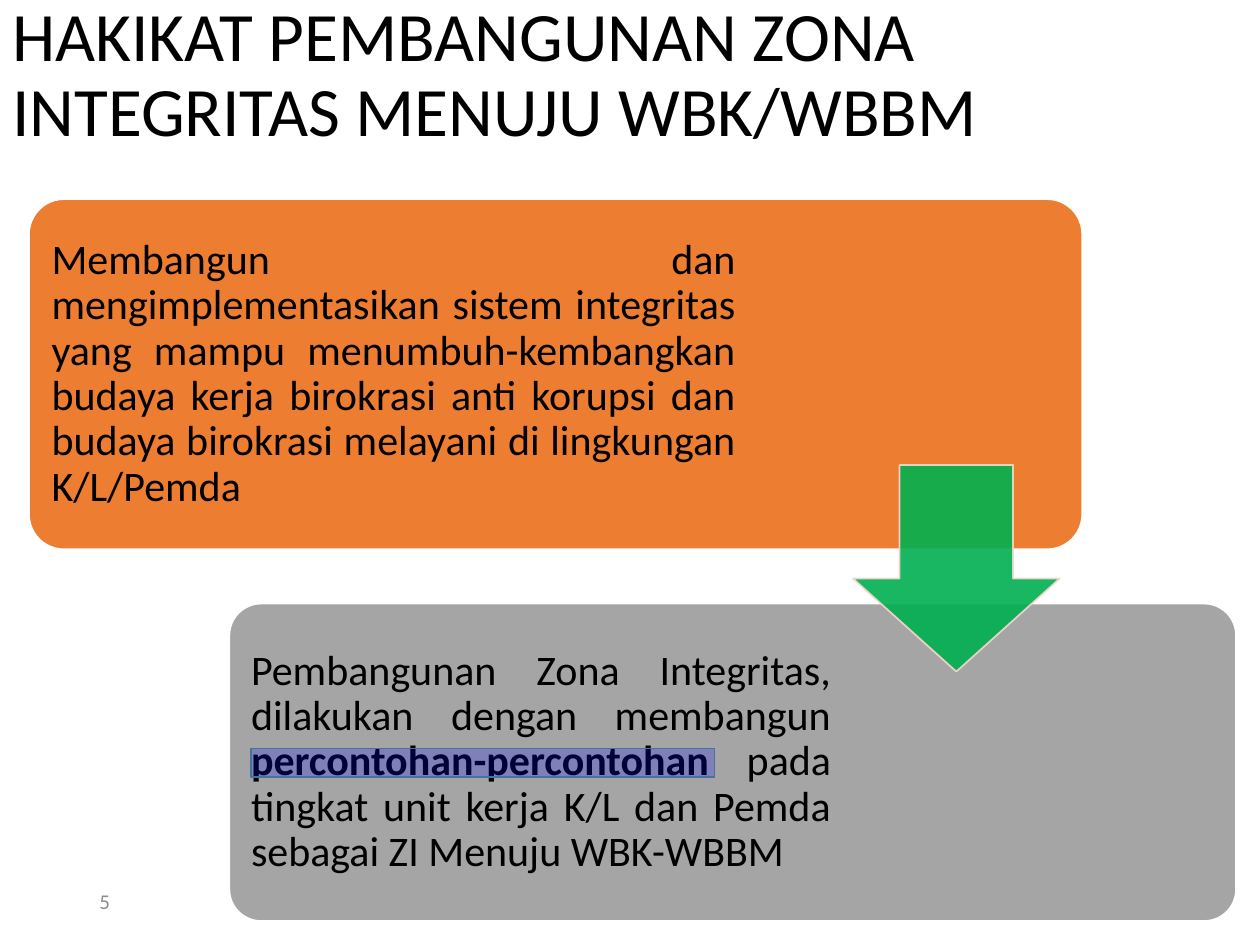
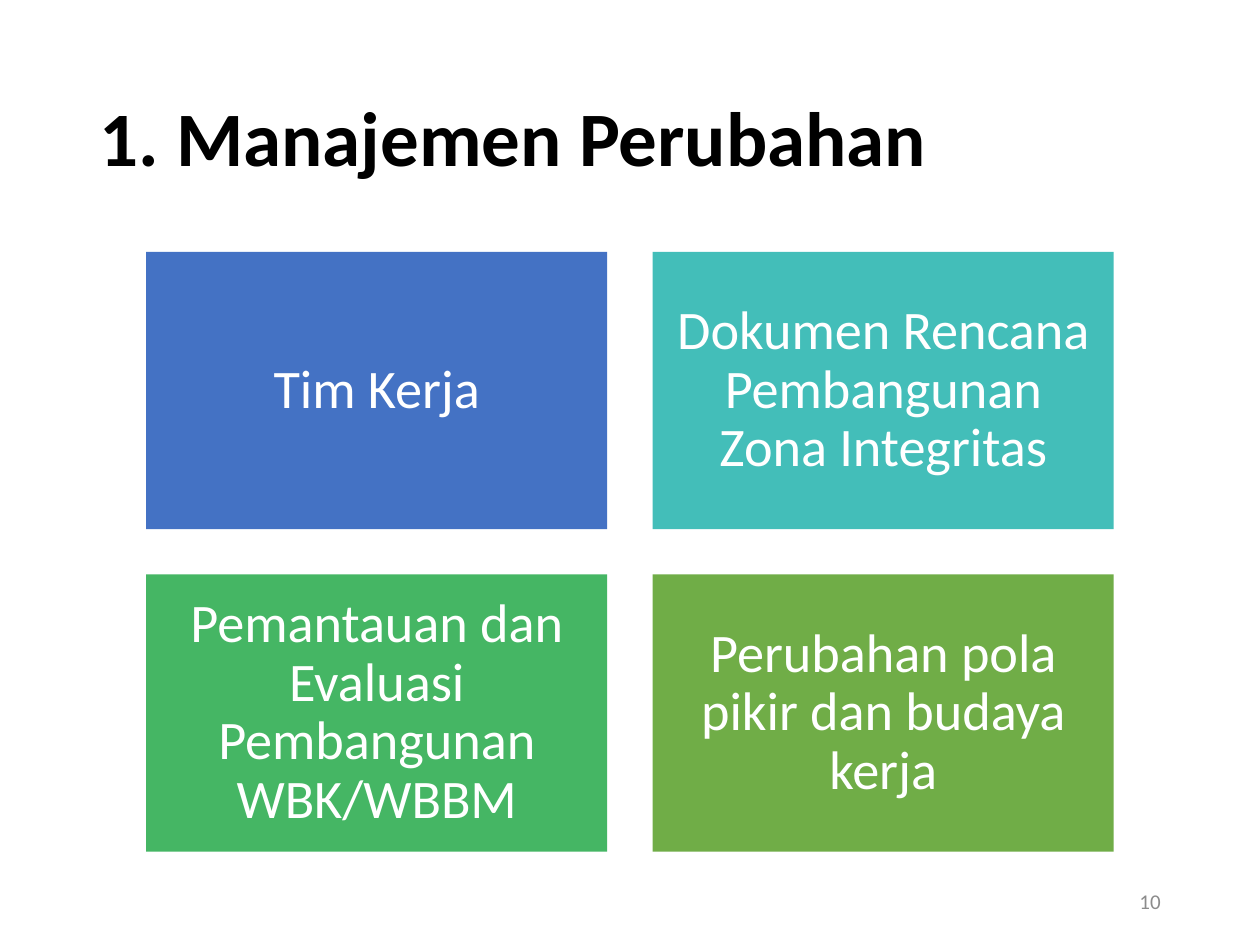
"""Build two slides on integrity zones and change management."""
import itertools
from dataclasses import dataclass
from typing import Optional

import lxml.etree
import pptx
import pptx.dml.color
import pptx.enum.shapes
import pptx.enum.text
import pptx.oxml.ns
import pptx.shapes.autoshape
import pptx.slide
import pptx.util

SHAPES = pptx.enum.shapes.MSO_SHAPE
ALIGN = pptx.enum.text.PP_ALIGN


@dataclass(frozen=True)
class Theme:
    """Colours, font and type sizes of the deck."""
    font: str = "Calibri"
    ink: str = "000000"
    paper: str = "FFFFFF"
    muted: str = "8C8C8C"
    orange: str = "ED7D31"
    grey: str = "A5A5A5"
    arrow: str = "00B050"
    arrow_edge: str = "F8D7CE"
    marker: str = "0000FF"
    marker_edge: str = "43739E"
    blue: str = "4472C4"
    teal: str = "43BEB9"
    green: str = "45B664"
    olive: str = "70AD47"
    long_title: float = 39.6
    title: float = 44
    tile: float = 31
    body: float = 24
    footer: float = 12
    tight: float = 0.9
    edge: float = 1


@dataclass(frozen=True)
class Grid:
    """Slide grid of equal square cells."""
    columns: int = 100
    rows: int = 75
    cell: int = pptx.util.Inches(0.1)

    def length(self, cells: float) -> int:
        """Turn a number of cells into a slide length."""
        return round(cells * self.cell)


@dataclass(frozen=True)
class Area:
    """Rectangle in grid columns and rows."""
    column: float
    row: float
    columns: float
    rows: float

    def box(self) -> tuple[int, ...]:
        """Return left, top, width and height as slide lengths."""
        return tuple(GRID.length(n) for n in (self.column, self.row, self.columns, self.rows))


@dataclass(frozen=True)
class Figure:
    """Preset shape with its colours and opacity in percent."""
    area: Area
    preset: SHAPES
    fill: str
    edge: Optional[str] = None
    adjustments: tuple[float, ...] = ()
    fill_opacity: int = 100
    edge_opacity: int = 100


@dataclass(frozen=True)
class Card:
    """Rounded statement whose text leaves free room on the right."""
    area: Area
    fill: str
    text: str
    free_columns: float
    emphasis: str = ""


@dataclass(frozen=True)
class Tile:
    """Topic in the matrix."""
    text: str
    fill: str


THEME = Theme()
GRID = Grid()
FOOTER_LEFT, FOOTER_RIGHT = 6.9, 70.6
MATRIX = Area(11.6, 20, 36.6, 22)
MATRIX_GAP = 3.6

CARDS = (
    Card(Area(2.3, 15.8, 83.6, 27.8), THEME.orange,
         "Membangun dan mengimplementasikan sistem integritas yang mampu "
         "menumbuh-kembangkan budaya kerja birokrasi anti korupsi dan budaya "
         "birokrasi melayani di lingkungan K/L/Pemda", 26.7),
    Card(Area(18.2, 47.9, 79.9, 25.2), THEME.grey,
         "Pembangunan Zona Integritas, dilakukan dengan membangun "
         "percontohan-percontohan pada tingkat unit kerja K/L dan Pemda "
         "sebagai ZI Menuju WBK-WBBM", 31.4, "percontohan-percontohan"),
)
ARROW = Figure(Area(67.7, 36.9, 16.4, 16.4), SHAPES.DOWN_ARROW, THEME.arrow,
               THEME.arrow_edge, (0.55, 0.45), 90, 90)
MARKER = Figure(Area(19.9, 59.4, 36.8, 2.3), SHAPES.RECTANGLE, THEME.marker,
                THEME.marker_edge, fill_opacity=22)
TILES = (
    Tile("Tim Kerja", THEME.blue),
    Tile("Dokumen Rencana Pembangunan Zona Integritas", THEME.teal),
    Tile("Pemantauan dan Evaluasi Pembangunan WBK/WBBM", THEME.green),
    Tile("Perubahan pola pikir dan budaya kerja", THEME.olive),
)


def rgb(value: str) -> pptx.dml.color.RGBColor:
    """Read a hexadecimal colour."""
    return pptx.dml.color.RGBColor.from_string(value)


def write(holder: pptx.shapes.autoshape.Shape, text: str, *, size: float,
          color: str = THEME.ink, bold: bool = False, emphasis: str = "",
          align: ALIGN = ALIGN.LEFT, spacing: float = THEME.tight,
          insets: tuple[float, ...] = (1, 0.5, 1, 0.5)) -> None:
    """Write one vertically centred paragraph with an optional bold phrase."""
    frame = holder.text_frame
    frame.word_wrap = True
    frame.vertical_anchor = pptx.enum.text.MSO_ANCHOR.MIDDLE
    (frame.margin_left, frame.margin_top,
     frame.margin_right, frame.margin_bottom) = map(GRID.length, insets)
    paragraph = frame.paragraphs[0]
    paragraph.alignment = align
    paragraph.line_spacing = spacing
    pieces = text.partition(emphasis) if emphasis else (text,)
    for piece in pieces:
        run = paragraph.add_run()
        run.text = piece
        run.font.name = THEME.font
        run.font.size = pptx.util.Pt(size)
        run.font.bold = bold or piece == emphasis
        run.font.color.rgb = rgb(color)


def fade(shape: pptx.shapes.autoshape.Shape, route: str, opacity: int) -> None:
    """Set the opacity of the colour found along the route."""
    if opacity < 100:
        color = shape.element.spPr.xpath(route)[0]
        lxml.etree.SubElement(color, pptx.oxml.ns.qn("a:alpha"), val=str(opacity * 1000))


def draw(slide: pptx.slide.Slide, figure: Figure) -> pptx.shapes.autoshape.Shape:
    """Draw a preset shape."""
    shape = slide.shapes.add_shape(figure.preset, *figure.area.box())
    shape.shadow.inherit = False
    for index, value in enumerate(figure.adjustments):
        shape.adjustments[index] = value
    shape.fill.solid()
    shape.fill.fore_color.rgb = rgb(figure.fill)
    fade(shape, "a:solidFill/a:srgbClr", figure.fill_opacity)
    if figure.edge:
        shape.line.color.rgb = rgb(figure.edge)
        shape.line.width = pptx.util.Pt(THEME.edge)
        fade(shape, "a:ln/a:solidFill/a:srgbClr", figure.edge_opacity)
    else:
        shape.line.fill.background()
    return shape


def add_title(slide: pptx.slide.Slide, area: Area, text: str, size: float,
              bold: bool = False) -> None:
    """Add the slide title."""
    write(slide.shapes.add_textbox(*area.box()), text, size=size, bold=bold)


def add_page_number(slide: pptx.slide.Slide, number: int, column: float, align: ALIGN) -> None:
    """Add the page number in the footer row."""
    footer = slide.shapes.add_textbox(*Area(column, 69.5, 22.5, 4).box())
    write(footer, str(number), size=THEME.footer, color=THEME.muted, align=align, spacing=1)


def add_card(slide: pptx.slide.Slide, card: Card) -> None:
    """Add a rounded statement."""
    statement = draw(slide, Figure(card.area, SHAPES.ROUNDED_RECTANGLE, card.fill,
                                   THEME.paper, (0.1,)))
    write(statement, card.text, size=THEME.body, emphasis=card.emphasis,
          align=ALIGN.JUSTIFY, insets=(1, 1, card.free_columns, 1))


def add_matrix(slide: pptx.slide.Slide, tiles: tuple[Tile, ...]) -> None:
    """Lay the topics out two by two."""
    for (row, column), tile in zip(itertools.product(range(2), repeat=2), tiles):
        area = Area(MATRIX.column + column * (MATRIX.columns + MATRIX_GAP),
                    MATRIX.row + row * (MATRIX.rows + MATRIX_GAP),
                    MATRIX.columns, MATRIX.rows)
        topic = draw(slide, Figure(area, SHAPES.RECTANGLE, tile.fill))
        write(topic, tile.text, size=THEME.tile, color=THEME.paper,
              align=ALIGN.CENTER, insets=(1.3,) * 4)


def build_essence(slide: pptx.slide.Slide) -> None:
    """Build the slide on the essence of integrity zones."""
    add_title(slide, Area(0, 3, 95, 6.1),
              "HAKIKAT PEMBANGUNAN ZONA INTEGRITAS MENUJU WBK/WBBM", THEME.long_title)
    add_page_number(slide, 5, FOOTER_LEFT, ALIGN.LEFT)
    for card in CARDS:
        add_card(slide, card)
    for figure in (ARROW, MARKER):
        draw(slide, figure)


def build_change(slide: pptx.slide.Slide) -> None:
    """Build the slide on change management."""
    add_title(slide, Area(6.9, 4, 86.2, 14.5), "1. Manajemen Perubahan", THEME.title, bold=True)
    add_matrix(slide, TILES)
    add_page_number(slide, 10, FOOTER_RIGHT, ALIGN.RIGHT)


def main() -> None:
    """Build and save the deck."""
    deck = pptx.Presentation()
    deck.slide_width = GRID.length(GRID.columns)
    deck.slide_height = GRID.length(GRID.rows)
    for build in (build_essence, build_change):
        build(deck.slides.add_slide(deck.slide_layouts[6]))
    deck.save("out.pptx")


if __name__ == "__main__":
    main()
